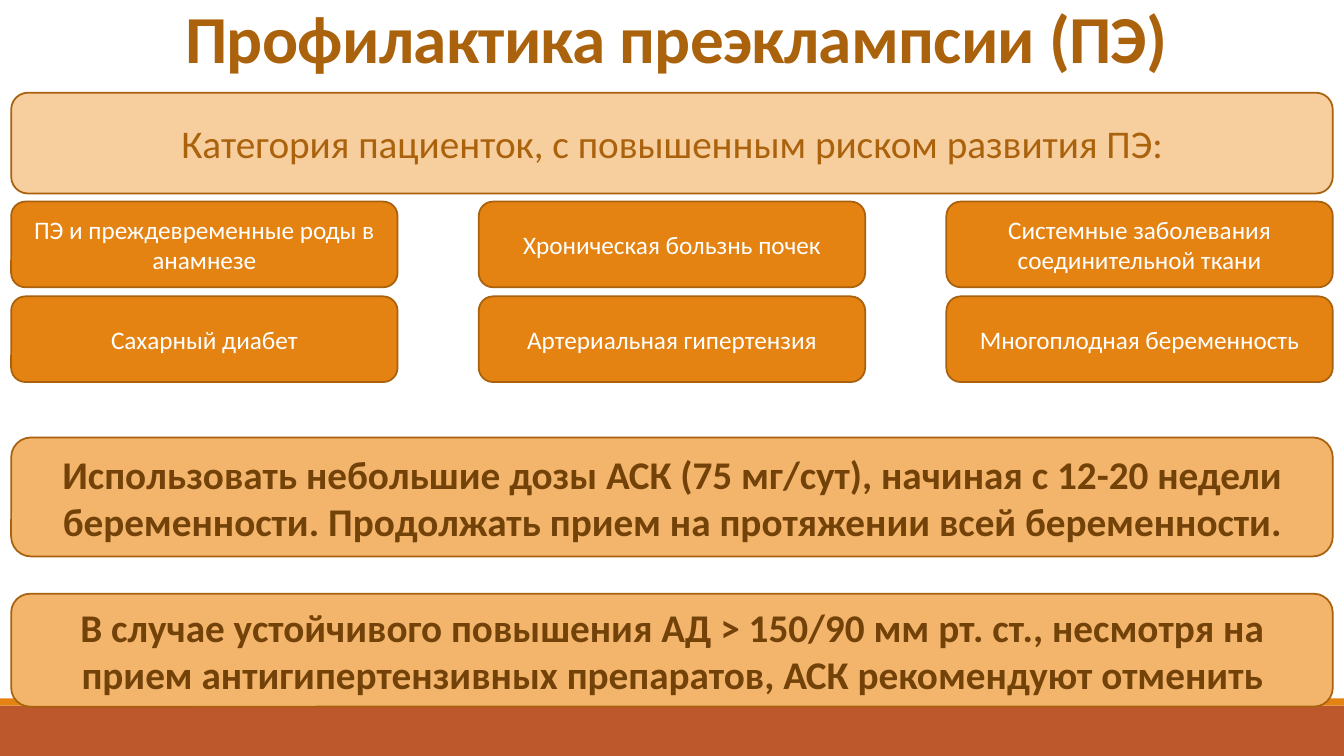
from dataclasses import dataclass

from pptx import Presentation
from pptx import util as u
from pptx.dml.color import RGBColor
from pptx.enum import shapes, text


@dataclass(frozen=True)
class Theme:
    font: str = "Calibri"
    white: str = "FFFFFF"
    rust: str = "BD582C"
    orange: str = "E48312"
    peach: str = "F7CE9D"
    apricot: str = "F3B56C"
    outline: str = "A9610D"
    heading: str = "AB620D"
    brown: str = "724209"
    title_size: int = 48
    panel_size: int = 28
    card_size: int = 18
    line_width: float = 1.25


class Deck:
    """Draws on one slide; lengths are in grid columns and rows."""

    COLS, ROWS = 120, 75

    def __init__(self, prs, theme):
        self.theme = theme
        self.slide = prs.slides.add_slide(prs.slide_layouts[6])
        self.col = prs.slide_width / self.COLS
        self.row = prs.slide_height / self.ROWS

    def box(self, x, y, w, h):
        return (round(x * self.col), round(y * self.row),
                round(w * self.col), round(h * self.row))

    def label(self, sp, words, size, color, bold=False):
        tf = sp.text_frame
        tf.word_wrap = True
        tf.text = words
        p = tf.paragraphs[0]
        p.alignment = text.PP_ALIGN.CENTER
        r = p.runs[0]
        r.font.name = self.theme.font
        r.font.size = u.Pt(size)
        r.font.bold = bold
        r.font.color.rgb = RGBColor.from_string(color)
        return p

    def shape(self, kind, box, fill):
        sp = self.slide.shapes.add_shape(kind, *self.box(*box))
        sp.shadow.inherit = False
        sp.fill.solid()
        sp.fill.fore_color.rgb = RGBColor.from_string(fill)
        sp.line.fill.background()
        return sp

    def band(self, y, h, fill):
        self.shape(shapes.MSO_SHAPE.RECTANGLE, (0, y, self.COLS, h), fill)

    def title(self, words, box):
        sp = self.slide.shapes.add_textbox(*self.box(*box))
        sp.text_frame.vertical_anchor = text.MSO_ANCHOR.BOTTOM
        p = self.label(sp, words, self.theme.title_size, self.theme.heading, True)
        p.line_spacing = 0.85
        p.runs[0]._r.get_or_add_rPr().set("spc", "-50")

    def panel(self, words, box, fill, size, color, bold=False):
        sp = self.shape(shapes.MSO_SHAPE.ROUNDED_RECTANGLE, box, fill)
        sp.line.color.rgb = RGBColor.from_string(self.theme.outline)
        sp.line.width = u.Pt(self.theme.line_width)
        sp.text_frame.vertical_anchor = text.MSO_ANCHOR.MIDDLE
        self.label(sp, words, size, color, bold)


RISKS = [
    ["ПЭ и преждевременные роды в анамнезе", "Хроническая бользнь почек",
     "Системные заболевания соединительной ткани"],
    ["Сахарный диабет", "Артериальная гипертензия", "Многоплодная беременность"],
]
ADVICE = [
    ("Использовать небольшие дозы АСК (75 мг/сут), начиная с 12-20 недели "
     "беременности. Продолжать прием на протяжении всей беременности.", 43.4, 11.8),
    ("В случае устойчивого повышения АД > 150/90 мм рт. ст., несмотря на прием "
     "антигипертензивных препаратов, АСК рекомендуют отменить", 58.9, 11.2),
]
MARGIN, FULL = 1, 118
CARD_W, CARD_H = 34.5, 8.5
CARD_TOP, ROW_STEP = 20, 9.4
COL_STEP = (FULL - CARD_W) / 2


def main():
    prs = Presentation()
    prs.slide_width, prs.slide_height = u.Inches(13.33), u.Inches(7.5)
    theme = Theme()
    s = Deck(prs, theme)

    s.band(70, 5, theme.rust)
    s.band(69.3, 0.7, theme.orange)
    s.title("Профилактика преэклампсии (ПЭ)", (9, -1.8, 102.8, 10))
    s.panel("Категория пациенток, с повышенным риском развития ПЭ:",
            (MARGIN, 9.2, FULL, 10), theme.peach, theme.panel_size, theme.heading)

    for i, risks in enumerate(RISKS):
        for j, risk in enumerate(risks):
            box = (MARGIN + j * COL_STEP, CARD_TOP + i * ROW_STEP, CARD_W, CARD_H)
            s.panel(risk, box, theme.orange, theme.card_size, theme.white)

    for words, y, h in ADVICE:
        s.panel(words, (MARGIN, y, FULL, h), theme.apricot,
                theme.panel_size, theme.brown, bold=True)

    prs.save("out.pptx")


if __name__ == "__main__":
    main()
